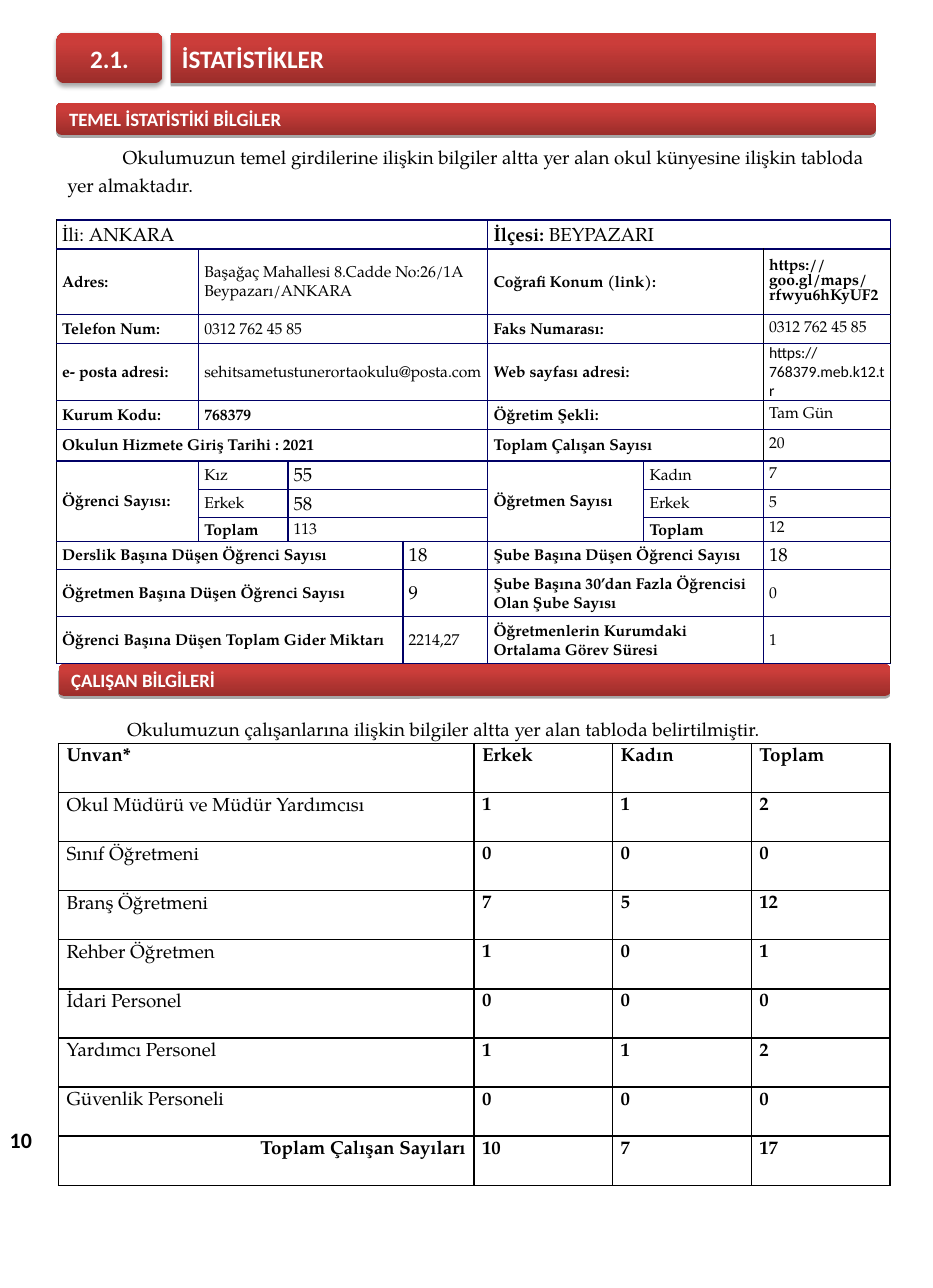
from dataclasses import dataclass
from typing import NamedTuple

from lxml.etree import SubElement
from pptx import Presentation
from pptx.dml.color import RGBColor
from pptx.enum.shapes import MSO_SHAPE as Shape
from pptx.enum.text import MSO_ANCHOR as Anchor, MSO_AUTO_SIZE as AutoSize, PP_ALIGN as Align
from pptx.oxml.ns import qn
from pptx.util import Cm, Pt


class Style(NamedTuple):
    size: float
    bold: bool = False
    font: str = "TeX Gyre Pagella"
    color: str = "000000"


@dataclass(frozen=True)
class Theme:
    black: str = "000000"
    navy: str = "000066"
    banner_stops: tuple = ((0, "9B2D2A"), (80, "CB3D3A"), (100, "CE3B37"))
    heading: Style = Style(16, True, "Calibri", "FFFFFF")
    subheading: Style = Style(12, True, "Calibri", "FFFFFF")
    page_number: Style = Style(14, True, "Calibri")
    body: Style = Style(12)
    strong: Style = Style(12, True)
    label: Style = Style(10, True)
    value: Style = Style(10)
    web: Style = Style(10, False, "Calibri")
    line_spacing: float = 1.25
    space_after: float = 8
    first_indent: float = 1.24
    border: float = 1


THEME = Theme()
LABEL, VALUE, BODY, STRONG = THEME.label, THEME.value, THEME.body, THEME.strong

SCHOOL_COLUMNS = (3.2, 2.01, 2.59, 1.91, 3.51, 2.69, 2.87)
SCHOOL_HEIGHTS = (0.66, 1.47, 0.66, 1.19, 0.66, 0.71, 0.48, 0.48, 0.48, 0.58, 0.99, 0.99)
# Each entry is (first column, style, text) and reaches to the next entry of its row.
SCHOOL_ROWS = (
    ((0, BODY, "İli: ANKARA"), (4, BODY, "İlçesi: BEYPAZARI")),
    ((0, LABEL, "Adres:"), (1, VALUE, "Başağaç Mahallesi 8.Cadde No:26/1A Beypazarı/ANKARA"),
     (4, LABEL, "Coğrafi Konum (link):"), (6, LABEL, "https://goo.gl/maps/rfwyu6hKyUF2")),
    ((0, LABEL, "Telefon Num:"), (1, VALUE, "0312 762 45 85"),
     (4, LABEL, "Faks Numarası:"), (6, VALUE, "0312 762 45 85")),
    ((0, LABEL, "e- posta adresi:"), (1, VALUE, "sehitsametustunerortaokulu@posta.com"),
     (4, LABEL, "Web sayfası adresi:"), (6, THEME.web, "https://768379.meb.k12.tr")),
    ((0, LABEL, "Kurum Kodu:"), (1, LABEL, "768379"),
     (4, LABEL, "Öğretim Şekli:"), (6, VALUE, "Tam Gün")),
    ((0, LABEL, "Okulun Hizmete Giriş Tarihi : 2021"),
     (4, LABEL, "Toplam Çalışan Sayısı"), (6, VALUE, "20")),
    ((0, LABEL, "Öğrenci Sayısı:"), (1, VALUE, "Kız"), (2, BODY, "55"),
     (4, LABEL, "Öğretmen Sayısı"), (5, VALUE, "Kadın"), (6, VALUE, "7")),
    ((1, VALUE, "Erkek"), (2, BODY, "58"), (5, VALUE, "Erkek"), (6, VALUE, "5")),
    ((1, LABEL, "Toplam"), (2, VALUE, "113"), (5, LABEL, "Toplam"), (6, VALUE, "12")),
    ((0, LABEL, "Derslik Başına Düşen Öğrenci Sayısı"), (3, BODY, "18"),
     (4, LABEL, "Şube Başına Düşen Öğrenci Sayısı"), (6, BODY, "18")),
    ((0, LABEL, "Öğretmen Başına Düşen Öğrenci Sayısı"), (3, BODY, "9"),
     (4, LABEL, "Şube Başına 30’dan Fazla Öğrencisi Olan Şube Sayısı"), (6, VALUE, "0")),
    ((0, LABEL, "Öğrenci Başına Düşen Toplam Gider Miktarı"), (3, VALUE, "2214,27"),
     (4, LABEL, "Öğretmenlerin Kurumdaki Ortalama Görev Süresi"), (6, VALUE, "1")),
)
HEADCOUNT_ROW, HEADCOUNT_SPAN, HEADCOUNT_COLUMNS = 6, 3, (0, 4)

STAFF_COLUMNS = (9.35, 3.12, 3.12, 3.12)
STAFF_ROWS = (
    ("Unvan*", "Erkek", "Kadın", "Toplam"),
    ("Okul Müdürü ve Müdür Yardımcısı", "1", "1", "2"),
    ("Sınıf Öğretmeni", "0", "0", "0"),
    ("Branş Öğretmeni", "7", "5", "12"),
    ("Rehber Öğretmen", "1", "0", "1"),
    ("İdari Personel", "0", "0", "0"),
    ("Yardımcı Personel", "1", "1", "2"),
    ("Güvenlik Personeli", "0", "0", "0"),
    ("Toplam Çalışan Sayıları", "10", "7", "17"),
)


def format_run(run, style):
    run.font.size, run.font.bold, run.font.name = Pt(style.size), style.bold, style.font
    run.font.color.rgb = RGBColor.from_string(style.color)


def write(frame, text, style, align=Align.LEFT, spaced=False):
    paragraph = frame.paragraphs[0]
    paragraph.text = text
    paragraph.alignment = align
    if spaced:
        paragraph.line_spacing = THEME.line_spacing
    for run in paragraph.runs:
        format_run(run, style)
    return paragraph


def add_color(parent, color):
    return SubElement(parent, qn("a:srgbClr"), val=color)


def format_banner(shape, text, style, align=Align.LEFT, blur=0):
    """Give the shape the red gradient, its shadow and its heading."""
    shape.line.fill.background()
    shape.fill.gradient()
    shape.fill.gradient_angle = 90
    properties = shape.fill._xPr
    stops = properties.find(qn("a:gradFill")).find(qn("a:gsLst"))
    for stop in list(stops):
        stops.remove(stop)
    for position, color in THEME.banner_stops:
        add_color(SubElement(stops, qn("a:gs"), pos=str(position * 1000)), color)
    shape.shadow.inherit = False
    shadow = SubElement(properties.find(qn("a:effectLst")), qn("a:outerShdw"), blurRad=str(Pt(blur)),
                        dist=str(Pt(1.8)), dir="5400000", rotWithShape="0")
    SubElement(add_color(shadow, THEME.black), qn("a:alpha"), val="35000")
    frame = shape.text_frame
    frame.auto_size, frame.word_wrap, frame.vertical_anchor = AutoSize.NONE, True, Anchor.MIDDLE
    write(frame, text, style, align)


def add_banner(slide, box, text, style, align=Align.LEFT, blur=0):
    shape = slide.shapes.add_shape(Shape.ROUNDED_RECTANGLE, *map(Cm, box))
    format_banner(shape, text, style, align, blur)


def add_header(slide, box):
    left, top, width, height = box
    badge_width, gap = 2.39, 0.18
    offset = badge_width + gap
    title = slide.shapes.title
    title.left, title.top = Cm(left + offset), Cm(top)
    title.width, title.height = Cm(width - offset), Cm(height)
    outline = SubElement(title.element.spPr, qn("a:prstGeom"), prst="roundRect")
    SubElement(outline, qn("a:avLst"))
    format_banner(title, "İSTATİSTİKLER", THEME.heading)
    add_banner(slide, (left, top, badge_width, height), "2.1.", THEME.heading, Align.CENTER, 3.1)


def add_text(slide, box, text, style):
    frame = slide.shapes.add_textbox(*map(Cm, box)).text_frame
    frame.word_wrap, frame.auto_size = True, AutoSize.SHAPE_TO_FIT_TEXT
    return write(frame, text, style)


def add_intro(slide, box, text, align=Align.LEFT):
    paragraph = add_text(slide, box, text, THEME.body)
    paragraph.alignment, paragraph.line_spacing = align, THEME.line_spacing
    paragraph._p.get_or_add_pPr().set("indent", str(Cm(THEME.first_indent)))


def add_grid(slide, box, columns, heights):
    """Add a table without a banded style and set its column and row sizes."""
    table = slide.shapes.add_table(len(heights), len(columns), *map(Cm, box)).table
    table.first_row = table.horz_banding = False
    for column, width in zip(table.columns, columns):
        column.width = Cm(width)
    for row, height in zip(table.rows, heights):
        row.height = Cm(height)
    return table


def format_cell(cell, margin, anchor, left, right, horizontal):
    """Set margins, anchor and the colours of the four borders."""
    cell.margin_left = cell.margin_right = Cm(margin)
    cell.margin_top = cell.margin_bottom = 0
    cell.vertical_anchor = anchor
    properties = cell._tc.get_or_add_tcPr()
    for side, color in zip(("lnL", "lnR", "lnT", "lnB"), (left, right, horizontal, horizontal)):
        line = SubElement(properties, qn(f"a:{side}"), w=str(Pt(THEME.border)))
        add_color(SubElement(line, qn("a:solidFill")), color)
    cell.fill.background()


def add_school_table(slide, box):
    table = add_grid(slide, box, SCHOOL_COLUMNS, SCHOOL_HEIGHTS)
    last = len(SCHOOL_COLUMNS) - 1
    for r, entries in enumerate(SCHOOL_ROWS):
        contact_row = 1 <= r < HEADCOUNT_ROW
        for c in range(last + 1):
            left = THEME.black if c == 0 or (c == last and contact_row) else THEME.navy
            right = THEME.black if c == last or (c >= 4 and contact_row) else THEME.navy
            format_cell(table.cell(r, c), 0.13, Anchor.MIDDLE, left, right, THEME.navy)
        starts = [start for start, _, _ in entries]
        in_headcount = HEADCOUNT_ROW < r < HEADCOUNT_ROW + HEADCOUNT_SPAN
        stops = sorted({*starts, *(HEADCOUNT_COLUMNS if in_headcount else ()), last + 1})
        for start, style, text in entries:
            stop = stops[stops.index(start) + 1]
            tall = r == HEADCOUNT_ROW and start in HEADCOUNT_COLUMNS
            cell = table.cell(r, start)
            if tall or stop - start > 1:
                cell.merge(table.cell(r + HEADCOUNT_SPAN - 1 if tall else r, stop - 1))
            spaced = start < last or r >= HEADCOUNT_ROW + HEADCOUNT_SPAN
            paragraph = write(cell.text_frame, text, style, spaced=spaced)
            if spaced:
                paragraph.space_after = Pt(THEME.space_after)
    district = table.cell(0, 4).text_frame.paragraphs[0]
    name, place = district.text.split(" ")
    district.runs[0].text = f"{name} "
    format_run(district.runs[0], STRONG)
    place_run = district.add_run()
    place_run.text = place
    format_run(place_run, BODY)


def add_staff_table(slide, box):
    height = box[3] / len(STAFF_ROWS)
    table = add_grid(slide, box, STAFF_COLUMNS, [height] * len(STAFF_ROWS))
    last = len(STAFF_ROWS) - 1
    for r, texts in enumerate(STAFF_ROWS):
        for c, text in enumerate(texts):
            cell = table.cell(r, c)
            format_cell(cell, 0.18, Anchor.TOP, THEME.black, THEME.black, THEME.black)
            style = BODY if c == 0 and 0 < r < last else STRONG
            align = Align.RIGHT if c == 0 and r == last else Align.LEFT
            write(cell.text_frame, text, style, align, True).space_after = Pt(THEME.space_after)


def main():
    deck = Presentation()
    deck.slide_width, deck.slide_height = Cm(21), Cm(29)
    slide = deck.slides.add_slide(deck.slide_layouts[5])
    add_header(slide, (1.27, 0.74, 18.44, 1.14))
    add_banner(slide, (1.27, 2.31, 18.44, 0.73), "TEMEL İSTATİSTİKİ BİLGİLER", THEME.subheading)
    add_intro(slide, (1.27, 3.02, 18.44, 1.5), "Okulumuzun temel girdilerine ilişkin bilgiler altta yer "
              "alan okul künyesine ilişkin tabloda yer almaktadır.", Align.JUSTIFY)
    add_school_table(slide, (1.27, 4.95, 18.78, 9.9))
    add_banner(slide, (1.32, 14.96, 18.72, 0.71), "ÇALIŞAN BİLGİLERİ", THEME.subheading)
    add_intro(slide, (1.37, 15.9, 18.34, 0.86), "Okulumuzun çalışanlarına ilişkin bilgiler altta yer "
              "alan tabloda belirtilmiştir.")
    add_staff_table(slide, (1.32, 16.74, 18.71, 9.95))
    add_text(slide, (-0.03, 25.25, 1.3, 0.86), "10", THEME.page_number)
    deck.save("out.pptx")


if __name__ == "__main__":
    main()
